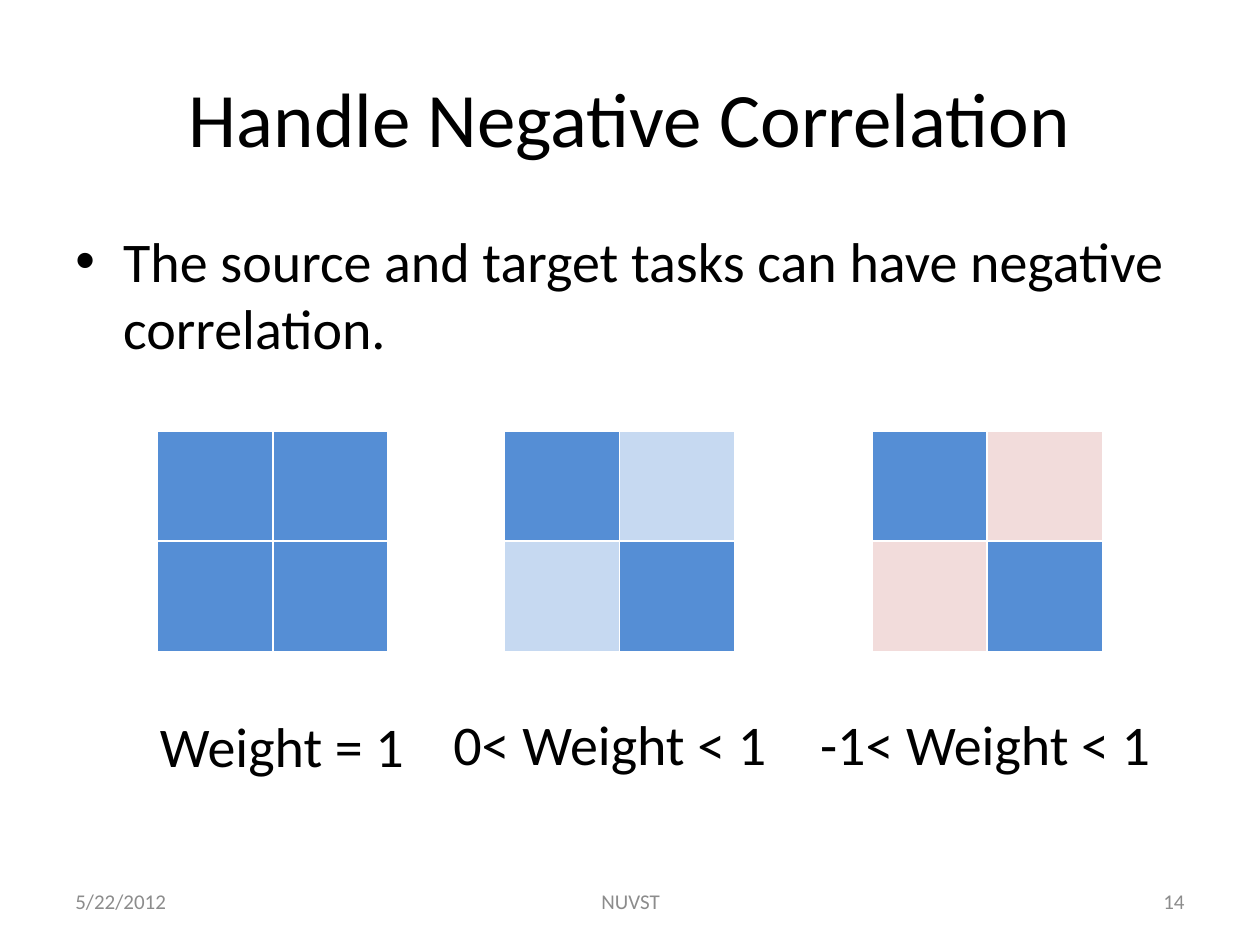
from lxml import etree
from pptx import Presentation
from pptx.dml.color import RGBColor
from pptx.enum.text import MSO_ANCHOR, PP_ALIGN
from pptx.oxml.ns import qn
from pptx.util import Inches, Pt

LEFT, MID, RIGHT = PP_ALIGN.LEFT, PP_ALIGN.CENTER, PP_ALIGN.RIGHT
TOP, CENTER = MSO_ANCHOR.TOP, MSO_ANCHOR.MIDDLE
FONT = "Calibri"
BLACK, GRAY, WHITE = "000000", "8C8C8C", "FFFFFF"
BLUE, PALE, PINK = "558ED5", "C6D9F1", "F2DCDB"


def color(code):
    return RGBColor.from_string(code)


def add_text(slide, box, text, size=32, ink=BLACK, align=LEFT, anchor=TOP, wrap=True):
    shape = slide.shapes.add_textbox(*map(Inches, box))
    frame = shape.text_frame
    frame.word_wrap = wrap
    frame.vertical_anchor = anchor
    para = frame.paragraphs[0]
    para.alignment = align
    run = para.add_run()
    run.text = text
    run.font.name = FONT
    run.font.size = Pt(size)
    run.font.color.rgb = color(ink)
    return para


def add_bullet(slide, box, text):
    para = add_text(slide, box, text)
    para.space_before = Pt(6.4)
    props = para._p.get_or_add_pPr()
    props.set("marL", str(Inches(0.38)))
    props.set("indent", str(-Inches(0.38)))
    etree.SubElement(props, qn("a:buFont"), typeface="Arial")
    etree.SubElement(props, qn("a:buChar"), char="•")


def style_cell(cell, fill):
    """Fill a cell and give it thin white borders."""
    props = cell._tc.get_or_add_tcPr()
    for side in "LRTB":
        line = etree.SubElement(props, qn(f"a:ln{side}"), w=str(Pt(1)))
        solid = etree.SubElement(line, qn("a:solidFill"))
        etree.SubElement(solid, qn("a:srgbClr"), val=WHITE)
    cell.fill.solid()
    cell.fill.fore_color.rgb = color(fill)


def add_matrix(slide, box, other):
    """Two-by-two table, blue on the diagonal and `other` off it."""
    table = slide.shapes.add_table(2, 2, *map(Inches, box)).table
    for row in range(2):
        for col in range(2):
            style_cell(table.cell(row, col), BLUE if row == col else other)


def add_footer(slide, top, height):
    parts = [
        (0.5, 2.33, "5/22/2012", LEFT),
        (3.42, 3.17, "NUVST", MID),
        (7.17, 2.33, "14", RIGHT),
    ]
    for left, width, text, align in parts:
        add_text(slide, (left, top, width, height), text, size=12, ink=GRAY,
                 align=align, anchor=CENTER)


def main():
    deck = Presentation()
    deck.slide_width, deck.slide_height = Inches(10), Inches(7.5)
    slide = deck.slides.add_slide(deck.slide_layouts[6])

    add_text(slide, (0.5, 0.3, 9, 1.25), "Handle Negative Correlation",
             size=44, align=MID, anchor=CENTER)
    add_bullet(slide, (0.5, 1.75, 9, 1.67),
               "The source and target tasks can have negative correlation.")
    cases = [
        (1.25, BLUE, "Weight = 1", (1.17, 5.6, 2.16, 0.64)),
        (4, PALE, "0< Weight < 1", (3.5, 5.58, 2.72, 0.64)),
        (6.92, PINK, "-1< Weight < 1", (6.41, 5.58, 2.85, 0.64)),
    ]
    for left, other, label, box in cases:
        add_matrix(slide, (left, 3.42, 1.83, 1.75), other)
        add_text(slide, box, label, wrap=False)
    add_footer(slide, 6.95, 0.4)

    deck.save("out.pptx")


if __name__ == "__main__":
    main()
